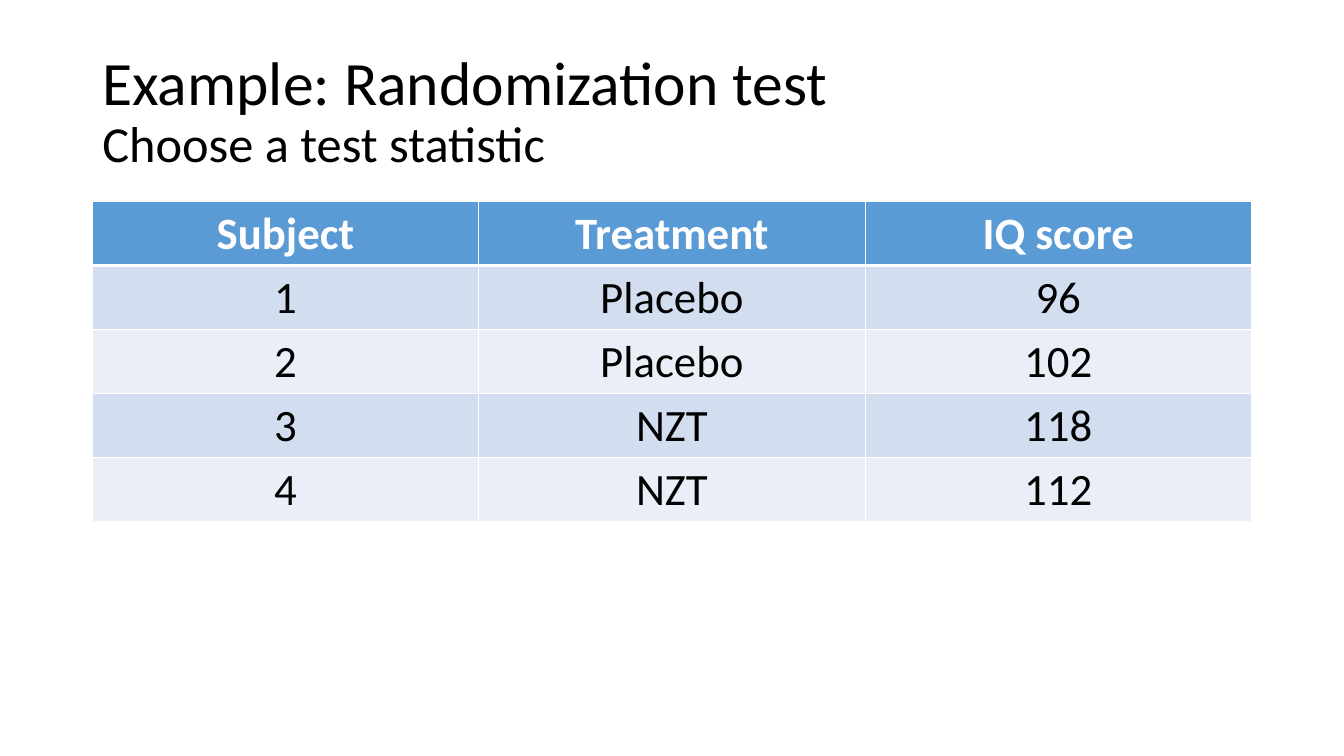
from lxml.etree import SubElement
from pptx import Presentation
from pptx.dml.color import RGBColor
from pptx.enum.text import MSO_ANCHOR, PP_ALIGN
from pptx.oxml.ns import qn
from pptx.util import Emu, Pt

PX = 9525
FONT = "Calibri"
COLORS = {
    "text": "000000",
    "white": "FFFFFF",
    "header": "5B9BD5",
    "odd": "D2DEEF",
    "even": "EAEFF7",
}
TITLE_BOX = (88, 38, 1104, 139)
TABLE_BOX = (88, 192, 1104, 305)
ROWS = [
    ("Subject", "Treatment", "IQ score"),
    ("1", "Placebo", "96"),
    ("2", "Placebo", "102"),
    ("3", "NZT", "118"),
    ("4", "NZT", "112"),
]


def px(length):
    return Emu(int(length * PX))


def color(name):
    return RGBColor.from_string(COLORS[name])


def format_span(span, size, color_name, bold=False):
    span.font.name = FONT
    span.font.size = Pt(size)
    span.font.bold = bold
    span.font.color.rgb = color(color_name)


def add_title(page, box):
    frame = page.shapes.add_textbox(*map(px, box)).text_frame
    frame.word_wrap = True
    frame.vertical_anchor = MSO_ANCHOR.MIDDLE
    frame.text = "Example: Randomization test\vChoose a test statistic"
    para = frame.paragraphs[0]
    para.line_spacing = 0.9
    for span, size in zip(para.runs, (44, 36)):
        format_span(span, size, "text")


def add_borders(cell, widths):
    properties = cell._tc.get_or_add_tcPr()
    for side, width in widths.items():
        line = SubElement(properties, qn(f"a:ln{side}"), w=str(Pt(width)))
        fill = SubElement(line, qn("a:solidFill"))
        SubElement(fill, qn("a:srgbClr"), val=COLORS["white"])


def add_score_table(page, box):
    left, top, width, height = box
    table = page.shapes.add_table(
        len(ROWS), len(ROWS[0]), px(left), px(top), px(width), px(height)
    ).table
    table.first_row = True
    table.horz_banding = False
    for row in table.rows:
        row.height = px(height / len(ROWS))
    for row_index, values in enumerate(ROWS):
        is_header = row_index == 0
        band = "header" if is_header else ("even", "odd")[row_index % 2]
        borders = {
            "L": 1,
            "R": 1,
            "T": 3 if row_index == 1 else 1,
            "B": 3 if is_header else 1,
        }
        for column_index, value in enumerate(values):
            cell = table.cell(row_index, column_index)
            add_borders(cell, borders)
            cell.fill.solid()
            cell.fill.fore_color.rgb = color(band)
            cell.text_frame.text = value
            para = cell.text_frame.paragraphs[0]
            para.alignment = PP_ALIGN.CENTER
            format_span(para.runs[0], 32, "white" if is_header else "text", is_header)


def main():
    deck = Presentation()
    deck.slide_width, deck.slide_height = px(1280), px(720)
    page = deck.slides.add_slide(deck.slide_layouts[6])
    add_title(page, TITLE_BOX)
    add_score_table(page, TABLE_BOX)
    deck.save("out.pptx")


if __name__ == "__main__":
    main()
